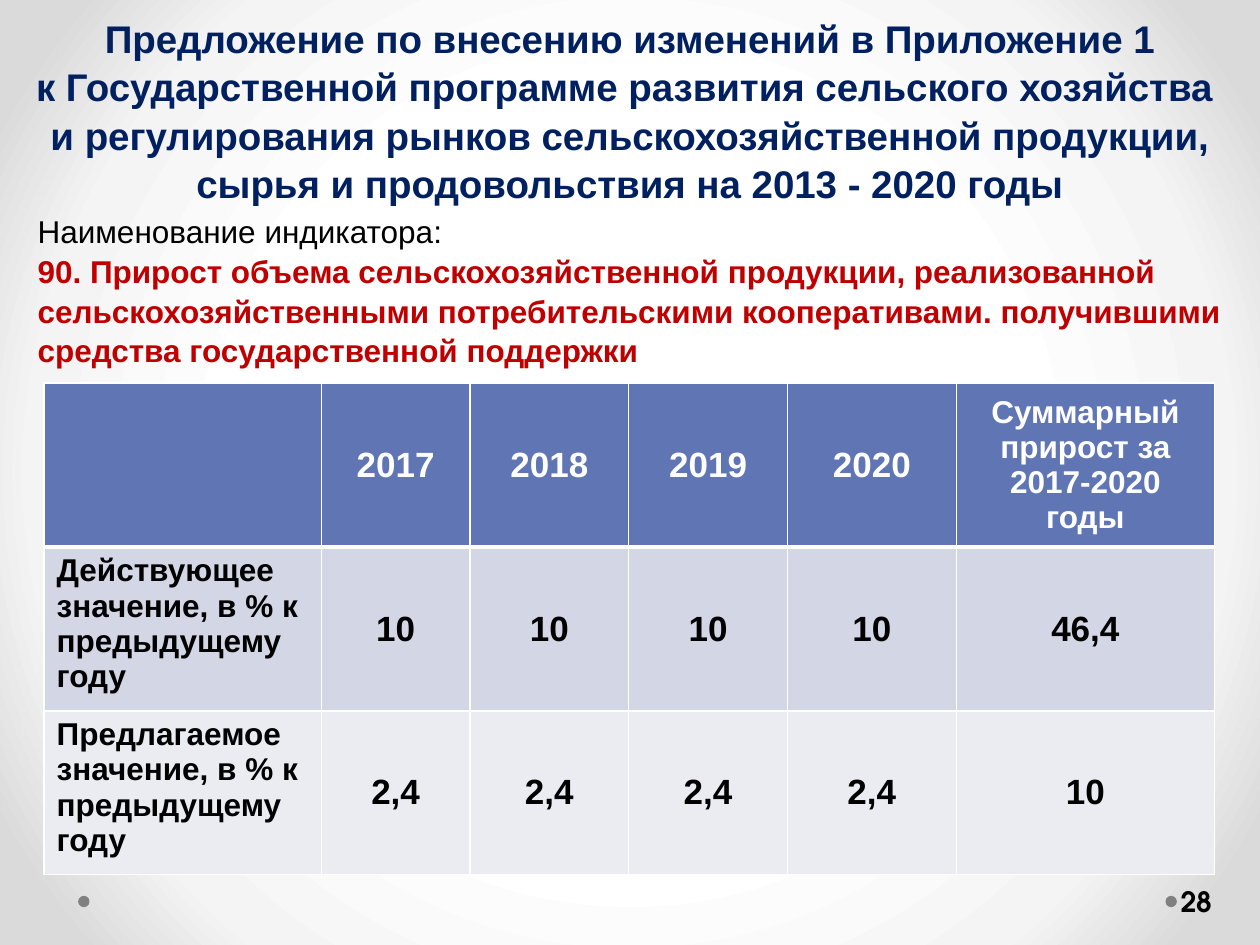
from pptx import Presentation
from pptx.dml.color import RGBColor
from pptx.enum.shapes import MSO_SHAPE as Shape
from pptx.enum.text import MSO_ANCHOR as Anchor, MSO_AUTO_SIZE as AutoSize, PP_ALIGN as Align
from pptx.oxml import parse_xml
from pptx.oxml.ns import nsdecls
from pptx.util import Inches, Pt

COLORS = {
    "title": "002060", "accent": "C00000", "text": "000000", "white": "FFFFFF",
    "header": "6076B4", "band": "D2D6E5", "light": "EAECF2", "dot": "808080",
}
BACKGROUND_STOPS = [(50, "FFFFFF"), (76, "F4F4F4"), (92, "DADADA")]
FONT = "Arial"
NUMBER_FONT = "TeX Gyre Adventor"

TITLE_LINES = [
    "Предложение по внесению изменений в Приложение 1",
    "к Государственной программе развития сельского хозяйства ",
    "и регулирования рынков сельскохозяйственной продукции,",
    "сырья и продовольствия на 2013 - 2020 годы",
]
INDICATOR_LABEL = "Наименование индикатора:"
INDICATOR_LINES = [
    "90. Прирост объема сельскохозяйственной продукции, реализованной",
    "сельскохозяйственными потребительскими кооперативами. получившими",
    "средства государственной поддержки",
]
COLUMN_WIDTHS = [2.2, 1.18, 1.26, 1.26, 1.34, 2.05]
ROW_HEIGHT = 1.3
TABLE_ROWS = [
    ["", "2017", "2018", "2019", "2020", "Суммарный прирост за 2017-2020 годы"],
    ["Действующее значение, в % к предыдущему году"] + ["10"] * 4 + ["46,4"],
    ["Предлагаемое значение, в % к предыдущему году"] + ["2,4"] * 4 + ["10"],
]


def rgb(name):
    return RGBColor.from_string(COLORS[name])


def add_run(paragraph, text, size, color, bold=True, font=FONT):
    run = paragraph.add_run()
    run.text = text
    run.font.name = font
    run.font.size = Pt(size)
    run.font.bold = bold
    run.font.color.rgb = rgb(color)


def add_lines(text_frame, lines, align=Align.LEFT):
    """Write one paragraph per (text, size, color, bold) line."""
    for index, line in enumerate(lines):
        paragraph = text_frame.paragraphs[0] if index == 0 else text_frame.add_paragraph()
        paragraph.alignment = align
        paragraph.line_spacing = 1.05
        add_run(paragraph, *line)


def set_background(slide):
    stops = "".join(
        f'<a:gs pos="{position * 1000}"><a:srgbClr val="{color}"/></a:gs>'
        for position, color in BACKGROUND_STOPS)
    slide.element.cSld.insert(0, parse_xml(
        f'<p:bg {nsdecls("p", "a")}><p:bgPr><a:gradFill rotWithShape="1">'
        f'<a:gsLst>{stops}</a:gsLst><a:path path="circle">'
        '<a:fillToRect l="50000" t="50000" r="50000" b="50000"/></a:path>'
        '</a:gradFill><a:effectLst/></p:bgPr></p:bg>'))


def add_dot(slide, left):
    dot = slide.shapes.add_shape(
        Shape.OVAL, Inches(left), Inches(7.11), Inches(0.09), Inches(0.09))
    dot.shadow.inherit = False
    dot.fill.solid()
    dot.fill.fore_color.rgb = rgb("dot")
    dot.line.fill.background()


def add_slide_number(slide, number):
    box = slide.shapes.add_textbox(Inches(9.34), Inches(6.95), Inches(0.61), Inches(0.4))
    frame = box.text_frame
    frame.word_wrap = True
    frame.vertical_anchor = Anchor.MIDDLE
    frame.margin_left = Inches(0.03)
    frame.margin_right = Inches(0.05)
    add_run(frame.paragraphs[0], number, 16, "text", font=NUMBER_FONT)


def set_title(slide):
    title = slide.shapes.title
    title.left, title.top = Inches(0), Inches(0.05)
    title.width, title.height = Inches(10), Inches(1.58)
    frame = title.text_frame
    frame.word_wrap = True
    frame.auto_size = AutoSize.SHAPE_TO_FIT_TEXT
    frame.vertical_anchor = Anchor.TOP
    add_lines(frame, [(line, 22, "title", True) for line in TITLE_LINES], Align.CENTER)


def add_indicator(slide):
    box = slide.shapes.add_textbox(Inches(0.2), Inches(1.62), Inches(9.7), Inches(1.31))
    box.text_frame.word_wrap = False
    box.text_frame.auto_size = AutoSize.SHAPE_TO_FIT_TEXT
    add_lines(box.text_frame, [(INDICATOR_LABEL, 18, "text", False)]
              + [(line, 18, "accent", True) for line in INDICATOR_LINES])


def set_borders(cell, bottom_width):
    properties = cell._tc.get_or_add_tcPr()
    for side, width in (("L", 1), ("R", 1), ("T", 1), ("B", bottom_width)):
        properties.append(parse_xml(
            f'<a:ln{side} {nsdecls("a")} w="{Pt(width)}"><a:solidFill>'
            f'<a:srgbClr val="{COLORS["white"]}"/></a:solidFill></a:ln{side}>'))


def add_indicator_table(slide):
    table = slide.shapes.add_table(
        len(TABLE_ROWS), len(COLUMN_WIDTHS), Inches(0.35), Inches(3.04),
        Inches(sum(COLUMN_WIDTHS)), Inches(ROW_HEIGHT * len(TABLE_ROWS))).table
    for column, width in zip(table.columns, COLUMN_WIDTHS):
        column.width = Inches(width)

    fills = ["header", "band", "light"]
    for row_index, values in enumerate(TABLE_ROWS):
        table.rows[row_index].height = Inches(ROW_HEIGHT)
        is_header = row_index == 0
        for column_index, value in enumerate(values):
            cell = table.cell(row_index, column_index)
            # The header is closed by a thick rule
            set_borders(cell, 3 if is_header or row_index == 0 else 1)
            cell.fill.solid()
            cell.fill.fore_color.rgb = rgb(fills[row_index])
            if not value:
                continue
            # Long labels are smaller than years and values
            paragraph = cell.text_frame.paragraphs[0]
            if column_index > 0:
                cell.vertical_anchor = Anchor.MIDDLE
                paragraph.alignment = Align.CENTER
            add_run(paragraph, value, 18 if len(value) > 4 else 20,
                    "white" if is_header else "text")


def main():
    presentation = Presentation()
    presentation.slide_width = Inches(10)
    presentation.slide_height = Inches(7.5)
    slide = presentation.slides.add_slide(presentation.slide_layouts[5])

    # Backdrop and footer
    set_background(slide)
    for left in (0.62, 9.25):
        add_dot(slide, left)
    add_slide_number(slide, "28")

    # Content
    set_title(slide)
    add_indicator(slide)
    add_indicator_table(slide)
    presentation.save("out.pptx")


if __name__ == "__main__":
    main()
